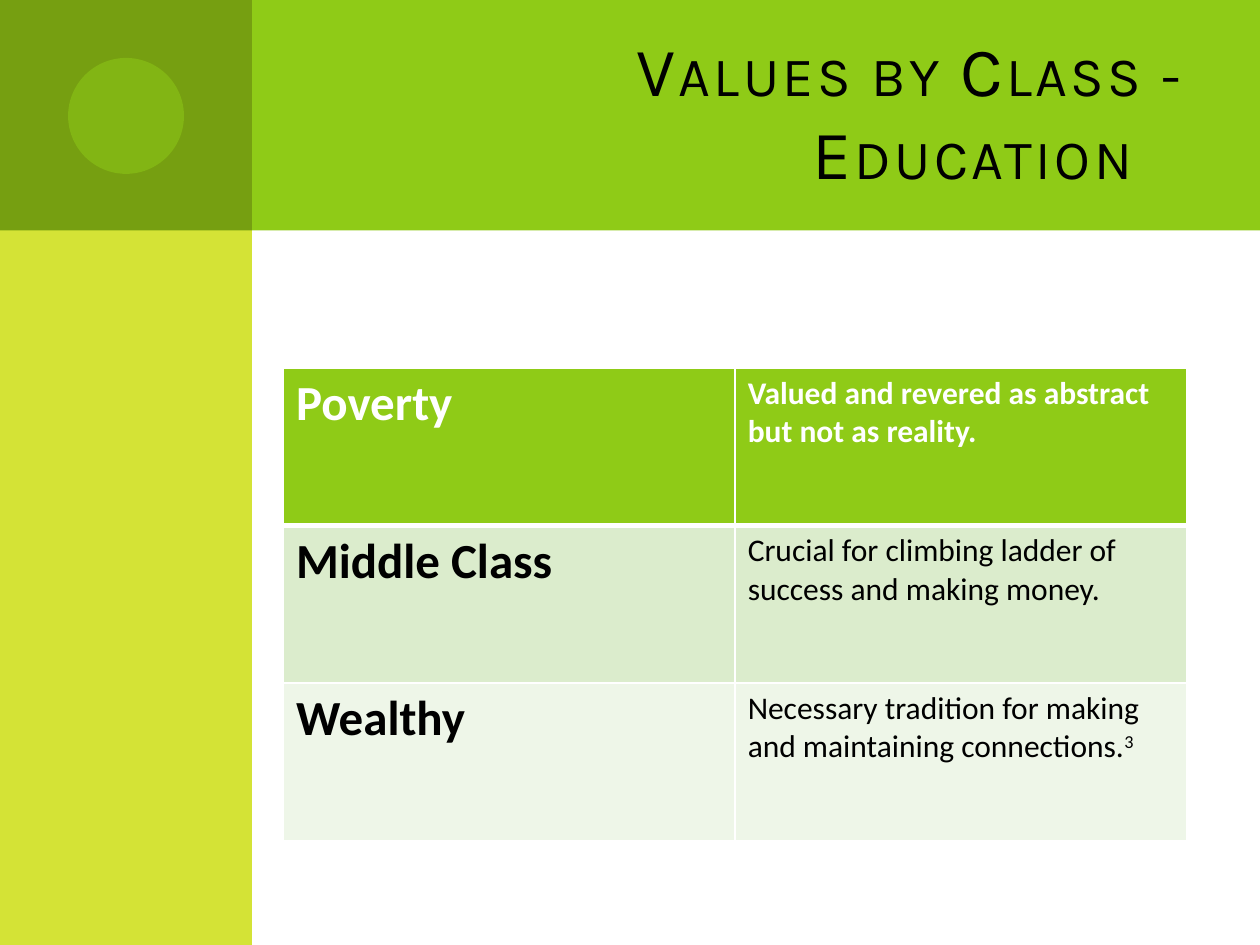
from lxml import etree
from pptx import Presentation
from pptx.dml.color import RGBColor
from pptx.enum.shapes import MSO_SHAPE
from pptx.enum.text import MSO_ANCHOR, PP_ALIGN
from pptx.oxml.ns import qn
from pptx.util import Inches, Pt

RECTANGLE, OVAL = MSO_SHAPE.RECTANGLE, MSO_SHAPE.OVAL
MIDDLE, RIGHT = MSO_ANCHOR.MIDDLE, PP_ALIGN.RIGHT
GREEN, LIME, OLIVE = "8FCB17", "D4E336", "769F11"
WHITE, BLACK = "FFFFFF", "000000"
TITLE_FONT, TABLE_FONT = "Karla", "Calibri"


def color(value):
    return RGBColor.from_string(value)


def add_text(para, text, size, font, fill, bold=False, **attributes):
    span = para.add_run()
    span.text = text
    span.font.size = Pt(size)
    span.font.name = font
    span.font.bold = bold
    span.font.color.rgb = color(fill)
    for name, value in attributes.items():
        span.font._element.set(name, value)


deck = Presentation()
deck.slide_width, deck.slide_height = Inches(10), Inches(7.5)
page = deck.slides.add_slide(deck.slide_layouts[5])

# Header band, side band, corner block and its half-transparent disc
for kind, left, top, width, height, fill in (
    (RECTANGLE, 0.5, 0, 9.5, 1.83, GREEN),
    (RECTANGLE, 0, 0, 2, 7.5, LIME),
    (RECTANGLE, 0, 0, 2, 1.83, OLIVE),
    (OVAL, 0.54, 0.46, 0.92, 0.92, GREEN),
):
    shape = page.shapes.add_shape(
        kind, Inches(left), Inches(top), Inches(width), Inches(height))
    shape.shadow.inherit = False
    shape.fill.solid()
    shape.fill.fore_color.rgb = color(fill)
    shape.line.fill.background()
    if kind == OVAL:
        disc_color = shape.element.spPr.find(".//" + qn("a:srgbClr"))
        etree.SubElement(disc_color, qn("a:alpha"), val="50000")

# Title, brought in front of the bands
title = page.shapes.title
title.left, title.top = Inches(2.67), Inches(0.25)
title.width, title.height = Inches(6.83), Inches(1.25)
title.element.getparent().append(title.element)
title.text_frame.word_wrap = True
title.text_frame.vertical_anchor = MIDDLE
title_para = title.text_frame.paragraphs[0]
title_para.alignment = RIGHT
add_text(title_para, "Values by Class - Education ", 39.6, TITLE_FONT, BLACK,
         cap="small", spc="200")

# Table: class, its view of education, footnote mark, fill, text colour
rows = (
    ("Poverty", "Valued and revered as abstract but not as reality.",
     "", GREEN, WHITE),
    ("Middle Class", "Crucial for climbing ladder of success and making money.",
     "", "DBECCC", BLACK),
    ("Wealthy", "Necessary tradition for making and maintaining connections.",
     "3", "EEF6E8", BLACK),
)
table = page.shapes.add_table(
    len(rows), 2, Inches(2.25), Inches(2.92), Inches(7.17), Inches(3.75)).table
table.first_row = table.horz_banding = False

for row, (name, view, note, fill, ink) in enumerate(rows):
    for column in range(2):
        cell = table.cell(row, column)
        # White borders, thicker below the header row
        properties = cell._tc.get_or_add_tcPr()
        thick_side = {0: "lnB", 1: "lnT"}.get(row)
        for side in ("lnL", "lnR", "lnT", "lnB"):
            weight = Pt(3 if side == thick_side else 1)
            border = etree.SubElement(properties, qn("a:" + side), w=str(weight))
            line_fill = etree.SubElement(border, qn("a:solidFill"))
            etree.SubElement(line_fill, qn("a:srgbClr"), val=WHITE)
        cell.fill.solid()
        cell.fill.fore_color.rgb = color(fill)

    add_text(table.cell(row, 0).text_frame.paragraphs[0], name, 28,
             TABLE_FONT, ink, bold=True)
    view_para = table.cell(row, 1).text_frame.paragraphs[0]
    add_text(view_para, view, 18, TABLE_FONT, ink, bold=row == 0)
    if note:
        add_text(view_para, note, 18, TABLE_FONT, ink, baseline="30000")

deck.save("out.pptx")
